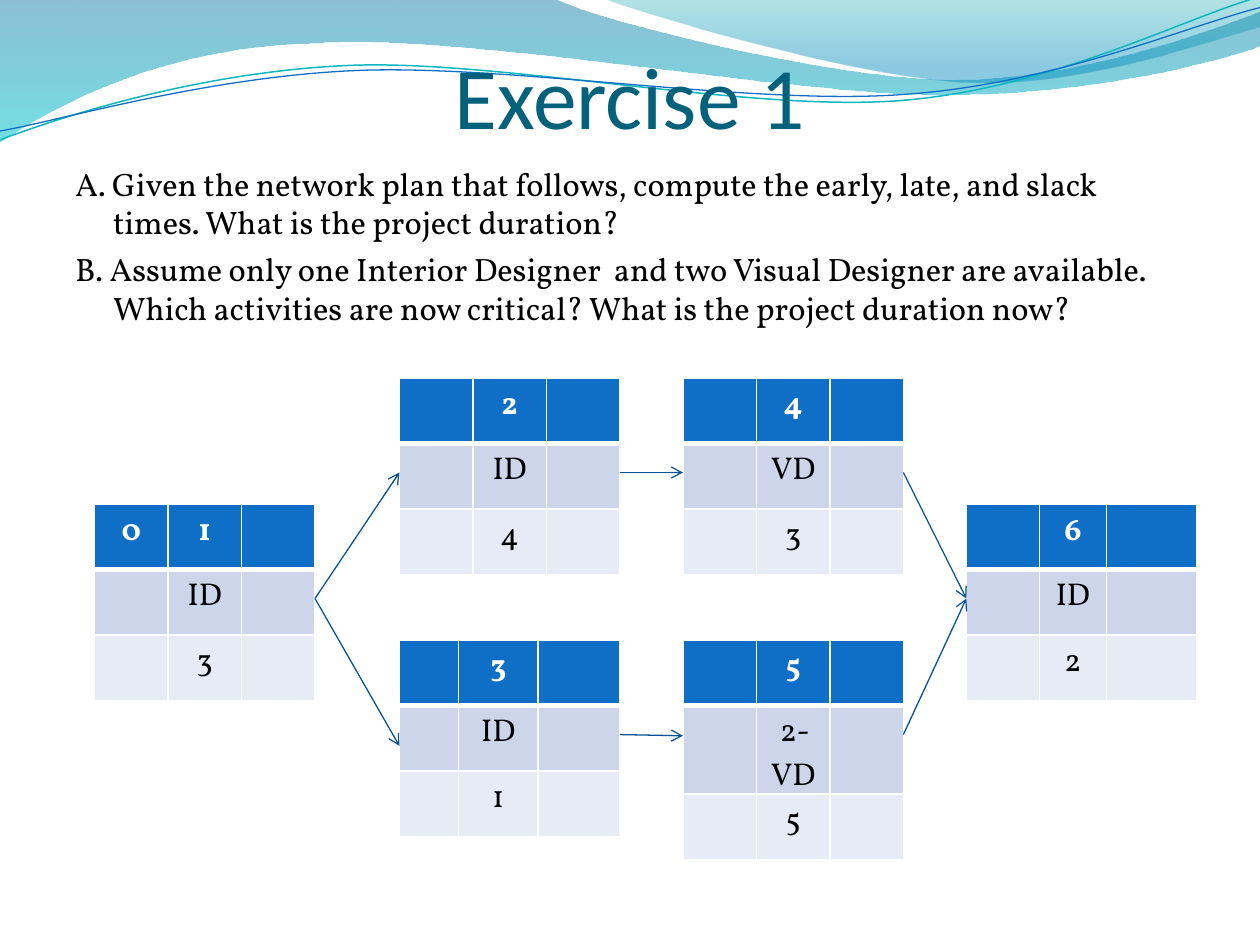
import dataclasses

import pptx
import pptx.dml.color
import pptx.enum.shapes
import pptx.enum.text
import pptx.oxml
import pptx.oxml.ns
import pptx.util
from pptx.util import Inches

RGB = pptx.dml.color.RGBColor.from_string
Pt = pptx.util.Pt
qn = pptx.oxml.ns.qn
NS = pptx.oxml.ns.nsdecls("a")
ALIGN = pptx.enum.text.PP_ALIGN
ANCHOR = pptx.enum.text.MSO_ANCHOR
THIRDS = (1.75 / 3,) * 3


@dataclasses.dataclass(frozen=True)
class Theme:
    heading_font: str = "Calibri"
    body_font: str = "Vollkorn"
    title_size: float = 50
    body_size: float = 18.5
    cell_size: float = 18
    title: str = "04617B"
    text: str = "000000"
    white: str = "FFFFFF"
    header: str = "0F6FC6"
    bands: tuple = ("CCD5EA", "E7EBF5")
    arrow: str = "095295"
    teal: str = "0AB8BF"
    wave_left: tuple = ((0, "0074A1", 45), (1, "00C6CF", 55))
    wave_right: tuple = ((0, "00A1A9", 30), (0.8, "008BBF", 45))


class SlideBuilder:
    def __init__(self, slide, theme):
        self.s = slide
        self.theme = theme

    def outline(self, start, segments, close):
        ends = [(Inches(seg[-2]), Inches(seg[-1])) for seg in segments]
        fb = self.s.shapes.build_freeform(Inches(start[0]), Inches(start[1]))
        fb.add_line_segments(ends, close=close)
        sp = fb.convert_to_shape()
        sp.shadow.inherit = False
        lines = list(sp._element.iter(qn("a:lnTo")))
        for line, seg in zip(lines, segments):
            if len(seg) == 6:
                points = "".join(
                    f'<a:pt x="{Inches(x) - sp.left}" y="{Inches(y) - sp.top}"/>'
                    for x, y in zip(seg[::2], seg[1::2]))
                line.getparent().replace(line, pptx.oxml.parse_xml(
                    f'<a:cubicBezTo {NS}>{points}</a:cubicBezTo>'))
        return sp

    def wave(self, start, segments, stops):
        sp = self.outline(start, segments, True)
        sp.line.fill.background()
        sp.fill.gradient()
        sp.fill.gradient_angle = 270
        for stop, (position, color, opacity) in zip(sp.fill.gradient_stops, stops):
            stop.position = position
            stop.color.rgb = RGB(color)
            stop._gs.find(qn("a:srgbClr")).append(
                pptx.oxml.parse_xml(f'<a:alpha {NS} val="{opacity * 1000}"/>'))

    def curve(self, start, segments, color, width):
        sp = self.outline(start, segments, False)
        sp.fill.background()
        sp.line.color.rgb = RGB(color)
        sp.line.width = Pt(width)

    def set_font(self, p, name, size, color, bold=False):
        p.font.name = name
        p.font.size = Pt(size)
        p.font.color.rgb = RGB(color)
        p.font.bold = bold

    def text_frame(self, x, y, w, h):
        tf = self.s.shapes.add_textbox(Inches(x), Inches(y), Inches(w), Inches(h)).text_frame
        tf.word_wrap = True
        return tf

    def title(self, text):
        tf = self.text_frame(0.5, 0.17, 9, 1)
        tf.vertical_anchor = ANCHOR.BOTTOM
        tf.margin_left = tf.margin_right = tf.margin_bottom = 0
        p = tf.paragraphs[0]
        p.text = text
        p.alignment = ALIGN.CENTER
        self.set_font(p, self.theme.heading_font, self.theme.title_size, self.theme.title)

    def questions(self, texts):
        tf = self.text_frame(0.5, 1.25, 9, 1.58)
        for i, text in enumerate(texts):
            p = tf.add_paragraph() if i else tf.paragraphs[0]
            p.text = text
            if i:
                p.space_before = Pt(4.3)
            pPr = p._p.get_or_add_pPr()
            pPr.set("marL", str(Inches(0.3)))
            pPr.set("indent", str(-Inches(0.3)))
            self.set_font(p, self.theme.body_font, self.theme.body_size, self.theme.text)

    def borders(self, cell, top, bottom):
        tcPr = cell._tc.get_or_add_tcPr()
        for i, (side, width) in enumerate(zip("LRTB", (1, 1, top, bottom))):
            tcPr.insert(i, pptx.oxml.parse_xml(
                f'<a:ln{side} {NS} w="{Pt(width)}"><a:solidFill>'
                f'<a:srgbClr val="{self.theme.white}"/></a:solidFill></a:ln{side}>'))

    def activity(self, x, y, number, resource, duration, early="", widths=THIRDS):
        theme = self.theme
        table = self.s.shapes.add_table(3, 3, Inches(x), Inches(y), Inches(sum(widths)),
                                        Inches(1.56)).table
        for column, width in zip(table.columns, widths):
            column.width = Inches(width)
        rows = ((early, number, ""), ("", resource, ""), ("", duration, ""))
        for r, texts in enumerate(rows):
            for c, text in enumerate(texts):
                cell = table.cell(r, c)
                cell.fill.solid()
                cell.fill.fore_color.rgb = RGB((theme.header, *theme.bands)[r])
                self.borders(cell, 3 if r == 1 else 1, 3 if r == 0 else 1)
                p = cell.text_frame.paragraphs[0]
                p.text = text
                p.alignment = ALIGN.CENTER
                self.set_font(p, theme.body_font, theme.cell_size,
                              theme.text if r else theme.white, r == 0)

    def arrow(self, x1, y1, x2, y2):
        line = self.s.shapes.add_connector(
            pptx.enum.shapes.MSO_CONNECTOR.STRAIGHT,
            Inches(x1), Inches(y1), Inches(x2), Inches(y2))
        line.line.color.rgb = RGB(self.theme.arrow)
        line.line.width = Pt(0.75)
        line.line._get_or_add_ln().append(
            pptx.oxml.parse_xml(f'<a:tailEnd {NS} type="arrow"/>'))
        line._element.spPr.append(pptx.oxml.parse_xml(f'<a:effectLst {NS}/>'))


def main():
    prs = pptx.Presentation()
    prs.slide_width, prs.slide_height = Inches(10), Inches(7.5)
    theme = Theme()
    b = SlideBuilder(prs.slides.add_slide(prs.slide_layouts[6]), theme)

    b.wave((0, 0), [(4.4, -0.01), (4.76, 0.17, 6.64, 0.63, 7.58, 0.63),
                    (8.53, 0.63, 9.58, 0.26, 10, 0.09), (10.01, 0.36),
                    (9.83, 0.44, 8.7, 0.76, 7.46, 0.75),
                    (6.22, 0.75, 3.82, 0.28, 2.57, 0.34),
                    (1.29, 0.36, 0.46, 0.83, -0.01, 1.13)], theme.wave_left)
    b.wave((4.79, -0.01), [(5.09, 0.11, 6.82, 0.62, 7.69, 0.65),
                           (8.56, 0.69, 9.61, 0.32, 10, 0.21), (10, 0)], theme.wave_right)
    b.curve((0, 1.11), [(0.48, 0.93, 1.58, 0.57, 2.77, 0.52),
                        (3.95, 0.47, 5.93, 0.89, 7.13, 0.8),
                        (8.33, 0.71, 9.38, 0.15, 9.98, -0.02)], theme.teal, 0.85)
    b.curve((0, 1.04), [(0.47, 0.96, 1.64, 0.61, 2.83, 0.56),
                        (4.03, 0.51, 5.97, 0.84, 7.17, 0.75),
                        (8.36, 0.67, 9.41, 0.21, 10, 0.06)], theme.header, 0.75)

    b.title("Exercise 1")
    b.questions((
        "A. Given the network plan that follows, compute the early, late, and slack times. "
        "What is the project duration?",
        "B. Assume only one Interior Designer  and two Visual Designer are available. "
        "Which activities are now critical? What is the project duration now?"))

    columns = (0.75, 3.17, 5.42, 7.67)
    upper, middle, lower = 3, 4, 5.08
    b.activity(columns[0], middle, "1", "ID", "3", early="0")
    b.activity(columns[1], upper, "2", "ID", "4")
    b.activity(columns[2], upper, "4", "VD", "3")
    b.activity(columns[3], middle, "6", "ID", "2", widths=(0.58, 0.53, 0.72))
    b.activity(columns[2], lower, "5", "2-VD", "5")
    b.activity(columns[1], lower, "3", "ID", "1", widths=(0.47, 0.63, 0.65))

    for ends in ((2.5, 4.75, 3.17, 3.75), (7.17, 3.75, 7.67, 4.75),
                 (7.17, 5.83, 7.67, 4.75), (4.92, 3.75, 5.42, 3.75),
                 (4.92, 5.83, 5.42, 5.84), (2.5, 4.75, 3.17, 5.92)):
        b.arrow(*ends)

    prs.save("out.pptx")


if __name__ == "__main__":
    main()
